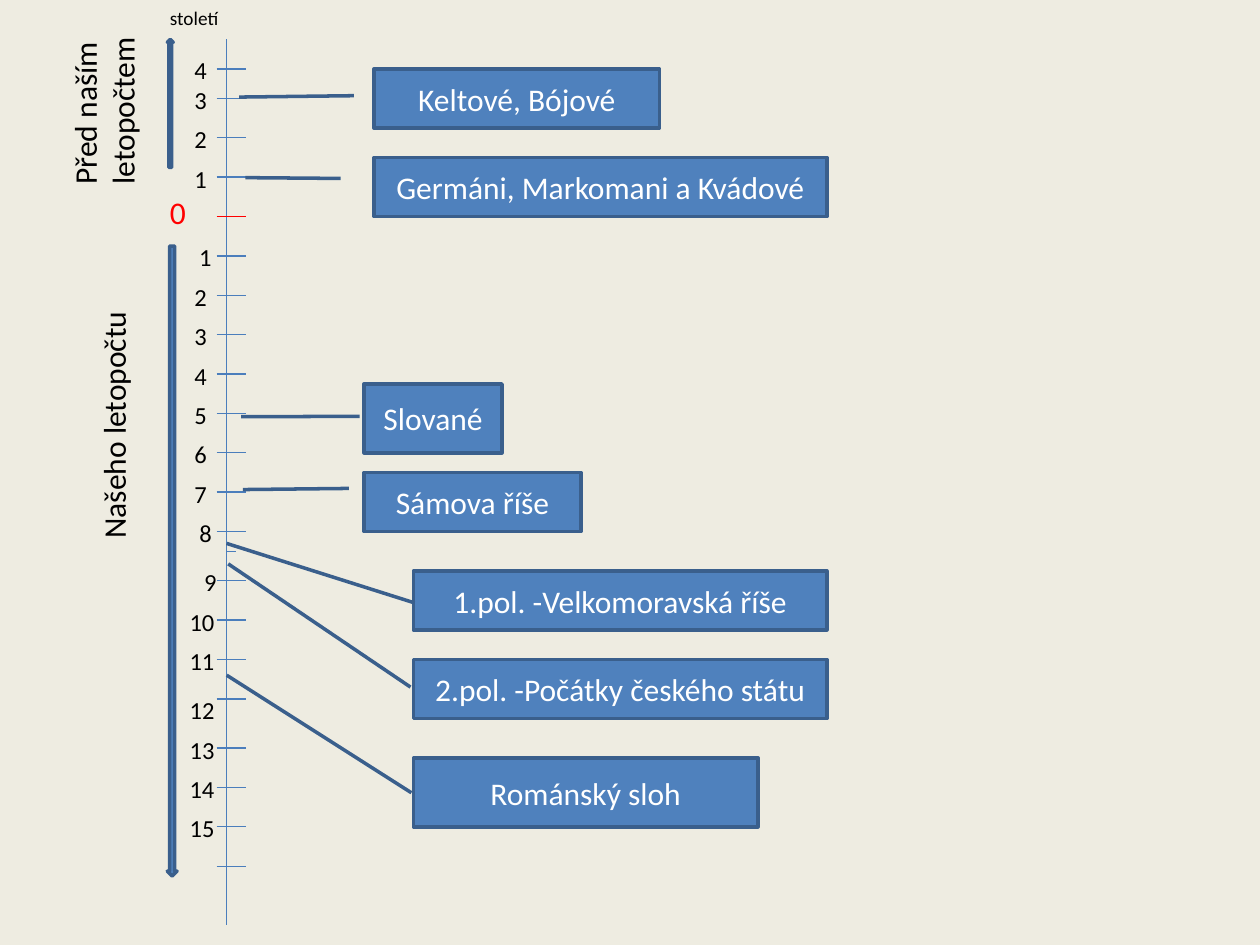
from lxml import etree
from pptx import Presentation
from pptx import util as u
from pptx.dml.color import RGBColor
from pptx.enum import shapes, text
from pptx.oxml.ns import qn

COLUMNS, ROWS = 128, 96
AXIS_COLUMN = 23
LABEL_HEIGHT = 4.3

# Century, tick row, label column, label width
BEFORE_ERA = [("4", 7, 19, 2), ("3", 10, 19, 2), ("2", 14, 19, 2), ("1", 18, 19, 2)]
OUR_ERA = [
    ("1", 26, 19, 2.5), ("2", 30, 19, 2), ("3", 34, 19, 2), ("4", 38, 19, 2),
    ("5", 42, 19, 2), ("6", 46, 19, 2), ("7", 50, 19, 2), ("8", 54, 19, 3),
    ("9", 59, 20, 2), ("10", 63, 18, 8), ("11", 67, 18, 10), ("12", 71, 18, 16),
    ("13", 76, 18, 6), ("14", 80, 18, 9), ("15", 84, 18, 6),
]
ZERO_ROW, LAST_ROW, HALF_CENTURY_ROW = 22, 88, 56

# Event, box on the grid, pointer as (start y, start x, end y, end x) shares of the box
EVENTS = [
    ("Keltové, Bójové", (38, 7, 29, 6), (0.454, -0.071, 0.477, -0.473)),
    ("Germáni, Markomani a Kvádové", (38, 16, 46, 6), (0.355, -0.074, 0.341, -0.284)),
    ("Slované", (37, 39, 14, 7), (0.471, -0.033, 0.476, -0.893)),
    ("Sámova říše", (37, 48, 22, 6), (0.27, -0.071, 0.289, -0.56)),
    ("1.pol. -Velkomoravská říše", (42, 58, 42, 6), (0.542, 0.003, -0.466, -0.452)),
    ("2.pol. -Počátky českého státu", (42, 67, 42, 6), (0.467, -0.007, -1.619, -0.448)),
    ("Románský sloh", (42, 77, 35, 7), (0.505, -0.006, -1.202, -0.542)),
]


def color(hex_string):
    return RGBColor.from_string(hex_string)


class Timeline:
    font = "Calibri"
    background, axis, fill, border = "EEECE1", "4B7EBC", "4F81BD", "3A5F8C"
    ink, paper, accent = "000000", "FFFFFF", "FF0000"

    def __init__(self, presentation):
        self.column = presentation.slide_width / COLUMNS
        self.row = presentation.slide_height / ROWS
        self.slide = presentation.slides.add_slide(presentation.slide_layouts[6])
        self.slide.background.fill.solid()
        self.slide.background.fill.fore_color.rgb = color(self.background)

    def place(self, left, top, width, height):
        """Turn grid columns and rows into slide lengths."""
        return (round(left * self.column), round(top * self.row),
                round(width * self.column), round(height * self.row))

    def set_text(self, shape, words, size, ink):
        shape.text_frame.text = words
        font = shape.text_frame.paragraphs[0].runs[0].font
        font.name, font.size, font.color.rgb = self.font, u.Pt(size), color(ink)

    def line(self, start, end, ink=axis):
        connector = self.slide.shapes.add_connector(
            shapes.MSO_CONNECTOR.STRAIGHT, *self.place(*start, *end))
        connector.line.color.rgb = color(ink)
        connector.line.width = u.Pt(0.75)
        properties = connector._element.spPr
        etree.SubElement(properties, qn("a:effectLst"))

    def tick(self, row, ink=axis):
        self.line((AXIS_COLUMN - 1, row), (AXIS_COLUMN + 2, row), ink)

    def label(self, words, box, size, ink=ink, rotation=0):
        shape = self.slide.shapes.add_textbox(*self.place(*box))
        shape.rotation = rotation
        shape.text_frame.word_wrap = True
        shape.text_frame.auto_size = text.MSO_AUTO_SIZE.SHAPE_TO_FIT_TEXT
        self.set_text(shape, words, size, ink)

    def block(self, kind, box):
        shape = self.slide.shapes.add_shape(kind, *self.place(*box))
        shape.shadow.inherit = False
        shape.fill.solid()
        shape.fill.fore_color.rgb = color(self.fill)
        shape.line.color.rgb = color(self.border)
        shape.line.width = u.Pt(2)
        return shape

    def event(self, words, box, pointer):
        shape = self.block(shapes.MSO_SHAPE.LINE_CALLOUT_1, box)
        for index, share in enumerate(pointer):
            shape.adjustments[index] = share
        self.set_text(shape, words, 18, self.paper)
        shape.text_frame.word_wrap = True
        shape.text_frame.vertical_anchor = text.MSO_ANCHOR.MIDDLE
        shape.text_frame.paragraphs[0].alignment = text.PP_ALIGN.CENTER


def main():
    presentation = Presentation()
    presentation.slide_width, presentation.slide_height = u.Inches(10), u.Inches(7.5)
    timeline = Timeline(presentation)

    timeline.line((AXIS_COLUMN, 4), (AXIS_COLUMN, 94))
    for century, row, left, width in BEFORE_ERA + OUR_ERA:
        timeline.tick(row)
        label_row = row - (1 if century == "12" else 2)
        timeline.label(century, (left, label_row, width, LABEL_HEIGHT), 14)
    timeline.tick(ZERO_ROW, timeline.accent)
    timeline.tick(LAST_ROW)
    timeline.line((AXIS_COLUMN, HALF_CENTURY_ROW), (AXIS_COLUMN + 1, HALF_CENTURY_ROW))

    timeline.label("0", (16, 19, 6, 5.1), 18, timeline.accent)
    timeline.label("Před naším letopočtem", (0.5, 5.5, 20, 9), 18, rotation=270)
    timeline.label("Našeho letopočtu", (-3, 38.9, 29, 5.1), 18, rotation=270)
    timeline.label("století", (16, 0, 8, 3.7), 11)
    timeline.block(shapes.MSO_SHAPE.UP_ARROW, (17, 4, 0.6, 13))
    timeline.block(shapes.MSO_SHAPE.DOWN_ARROW, (17, 25, 1, 64))

    for event in EVENTS:
        timeline.event(*event)
    presentation.save("out.pptx")


if __name__ == "__main__":
    main()
